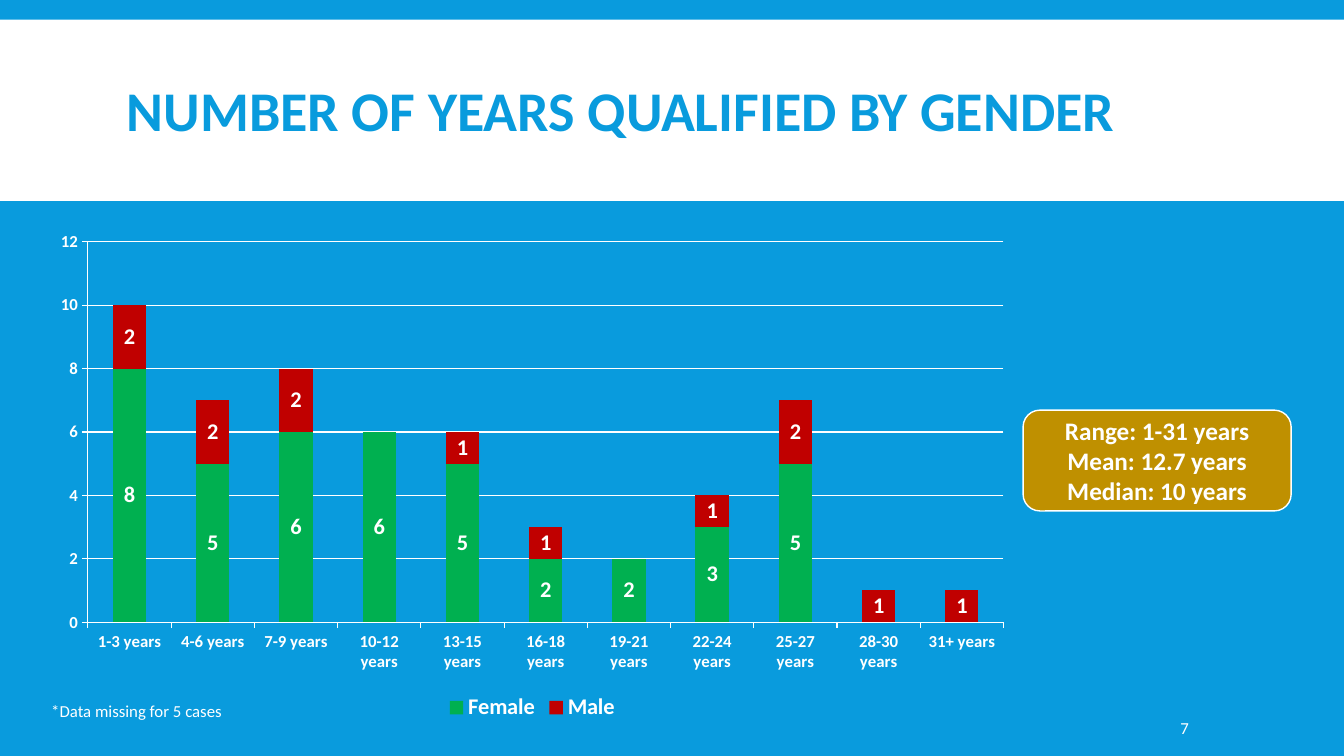
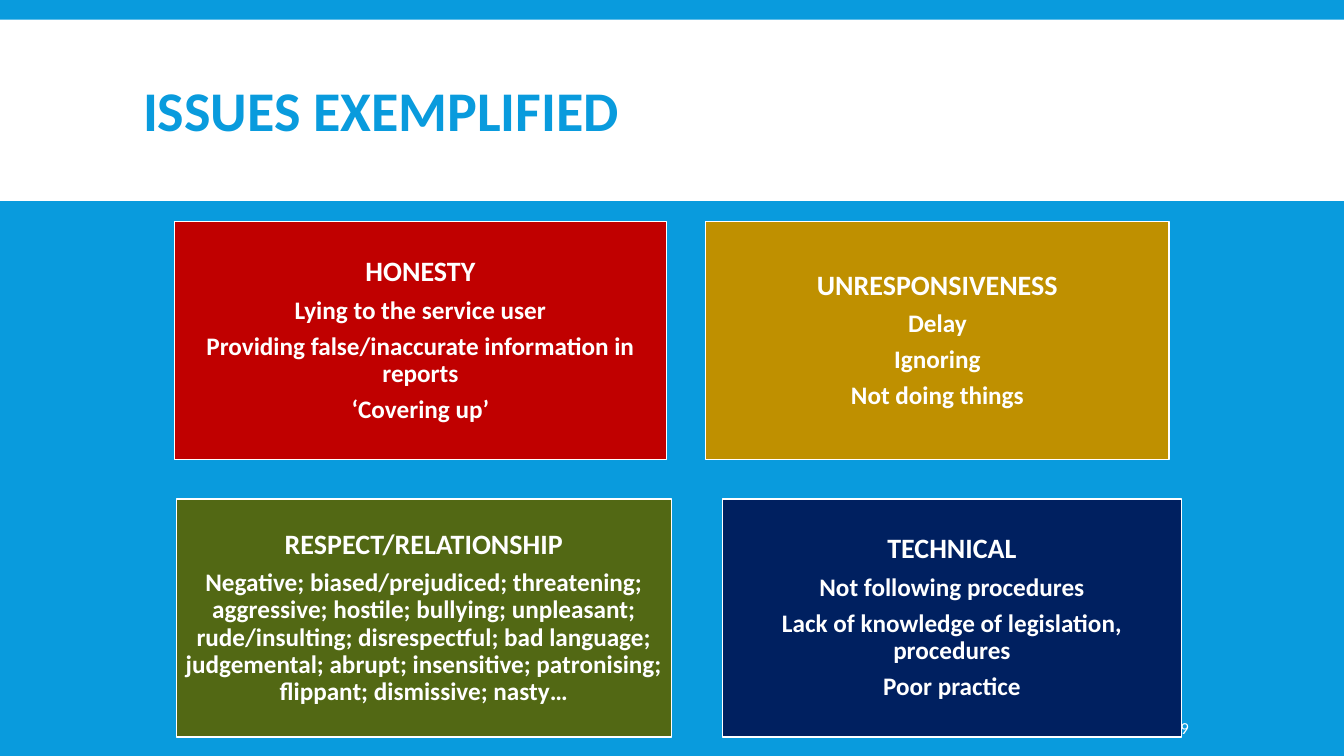
from lxml.etree import SubElement
from pptx import Presentation
from pptx.chart.data import CategoryChartData
from pptx.dml.color import RGBColor
from pptx.enum.chart import XL_CHART_TYPE, XL_LEGEND_POSITION, XL_TICK_MARK
from pptx.enum.shapes import MSO_SHAPE
from pptx.enum.text import MSO_ANCHOR, PP_ALIGN
from pptx.oxml.ns import qn
from pptx.util import Pt

FACE = "Calibri"
BLUE, WHITE = "099BDD", "FFFFFF"
GREEN, RED, GOLD = "00B050", "C00000", "BF9000"
OLIVE, NAVY = "526814", "002060"

YEARS = ["1-3", "4-6", "7-9", "10-12", "13-15", "16-18", "19-21", "22-24",
         "25-27", "28-30", "31+"]
SERIES = [
    ("Female", GREEN, [8, 5, 6, 6, 5, 2, 2, 3, 5, None, None]),
    ("Male", RED, [2, 2, 2, None, 1, 1, None, 1, 2, 1, 1]),
]
STATS = ["Range: 1-31 years", "Mean: 12.7 years", "Median: 10 years"]
CARD_H = 170
TOP_ROW, LOW_ROW = 158.4, 356.4
CARDS = [
    (124.6, TOP_ROW, 351.4, RED, "HONESTY",
     ["Lying to the service user",
      "Providing false/inaccurate information in reports",
      "‘Covering up’"]),
    (504, TOP_ROW, 331.2, GOLD, "UNRESPONSIVENESS",
     ["Delay", "Ignoring", "Not doing things"]),
    (126, LOW_ROW, 353.5, OLIVE, "RESPECT/RELATIONSHIP",
     ["Negative; biased/prejudiced; threatening; aggressive; hostile; "
      "bullying; unpleasant; rude/insulting; disrespectful; bad language; "
      "judgemental; abrupt; insensitive; patronising; flippant; "
      "dismissive; nasty…"]),
    (516.2, LOW_ROW, 327.6, NAVY, "TECHNICAL",
     ["Not following procedures",
      "Lack of knowledge of legislation, procedures",
      "Poor practice"]),
]


def color(code):
    return RGBColor.from_string(code)


def style(font, size, code=WHITE, bold=False):
    font.name, font.size, font.bold = FACE, Pt(size), bold
    font.color.rgb = color(code)


def paint(item, code):
    item.fill.solid()
    item.fill.fore_color.rgb = color(code)


def rule(line):
    line.color.rgb = color(WHITE)
    line.width = Pt(0.75)


def write(frame, lines, align=PP_ALIGN.LEFT, inset=None, spacing=None):
    """Fill a frame from (text, size, color, bold, space after) rows."""
    frame.word_wrap = True
    frame.vertical_anchor = MSO_ANCHOR.MIDDLE
    if inset is not None:
        frame.margin_left = frame.margin_right = Pt(inset)
        frame.margin_top = frame.margin_bottom = Pt(inset)
    for i, (text, size, code, bold, after) in enumerate(lines):
        para = frame.add_paragraph() if i else frame.paragraphs[0]
        para.alignment = align
        para.space_before, para.space_after = Pt(0), Pt(after)
        if spacing:
            para.line_spacing = spacing
        run = para.add_run()
        run.text = text
        style(run.font, size, code, bold)


def add_box(slide, kind, box, fill, edge=True):
    shape = slide.shapes.add_shape(kind, *map(Pt, box))
    shape.shadow.inherit = False
    paint(shape, fill)
    if edge:
        shape.line.color.rgb = color(WHITE)
        shape.line.width = Pt(1)
    else:
        shape.line.fill.background()
    return shape


def add_note(slide, text, box, inset=None):
    note = slide.shapes.add_textbox(*map(Pt, box))
    write(note.text_frame, [(text, 12, WHITE, False, 0)], inset=inset)


def add_slide(deck, text, left, width, page):
    slide = deck.slides.add_slide(deck.slide_layouts[5])
    title = slide.shapes.title
    title.left, title.top = Pt(left), Pt(22.3)
    title.width, title.height = Pt(width), Pt(118.8)
    write(title.text_frame, [(text, 40, BLUE, True, 0)], spacing=0.85)
    add_note(slide, page, (839.5, 505.4, 74.2, 28.8), inset=3.6)
    return slide


def set_theme(slide):
    """Give the layout of the slide its backdrop and title band."""
    layout = slide.slide_layout
    paint(layout.background, BLUE)
    band = add_box(slide, MSO_SHAPE.RECTANGLE, (0, 14, 960, 129.6),
                   WHITE, edge=False)
    layout.shapes._spTree.insert(2, band._element)


def add_chart(slide):
    data = CategoryChartData()
    data.categories = [f"{span} years" for span in YEARS]
    for name, _, values in SERIES:
        data.add_series(name, values)
    chart = slide.shapes.add_chart(
        XL_CHART_TYPE.COLUMN_STACKED,
        *map(Pt, (29.5, 158.4, 701.3, 360)), data).chart
    style(chart.font, 18)
    chart.has_title = False
    chart.has_legend = True
    chart.legend.position = XL_LEGEND_POSITION.BOTTOM
    chart.legend.include_in_layout = False
    style(chart.legend.font, 16, bold=True)
    for axis in (chart.category_axis, chart.value_axis):
        style(axis.tick_labels.font, 12, bold=True)
        axis.major_tick_mark = XL_TICK_MARK.OUTSIDE
        axis.minor_tick_mark = XL_TICK_MARK.NONE
        rule(axis.format.line)
    axis = chart.value_axis
    axis.minimum_scale, axis.maximum_scale, axis.major_unit = 0, 12, 2
    axis.has_major_gridlines = True
    rule(axis.major_gridlines.format.line)
    plot = chart.plots[0]
    plot.gap_width, plot.overlap = 150, 100
    plot.vary_by_categories = False
    for series, (_, code, _) in zip(plot.series, SERIES):
        paint(series.format, code)
        series.data_labels.show_value = True
        style(series.data_labels.font, 16, bold=True)


def add_stats(slide):
    box = add_box(slide, MSO_SHAPE.ROUNDED_RECTANGLE,
                  (730.8, 293, 191.5, 72), GOLD)
    write(box.text_frame, [(text, 18, WHITE, True, 0) for text in STATS],
          PP_ALIGN.CENTER)


def add_card(slide, left, top, width, fill, head, items):
    card = add_box(slide, MSO_SHAPE.RECTANGLE,
                   (left, top, width, CARD_H), fill)
    lines = [(head, 20, WHITE, True, 7)]
    lines += [(text, 18, WHITE, True, 6.3) for text in items[:-1]]
    lines.append((items[-1], 18, WHITE, True, 0))
    write(card.text_frame, lines, PP_ALIGN.CENTER, inset=5.4, spacing=0.9)


def main():
    deck = Presentation()
    deck.slide_width, deck.slide_height = Pt(960), Pt(540)

    slide = add_slide(deck, "NUMBER OF YEARS QUALIFIED BY GENDER",
                      83.5, 794.2, "7")
    set_theme(slide)
    add_note(slide, "*Data missing for 5 cases", (29.5, 496.8, 185.8, 21.6))
    add_stats(slide)
    add_chart(slide)

    slide = add_slide(deck, "ISSUES EXEMPLIFIED", 95, 770.4, "9")
    for card in CARDS:
        add_card(slide, *card)

    deck.save("out.pptx")


if __name__ == "__main__":
    main()
